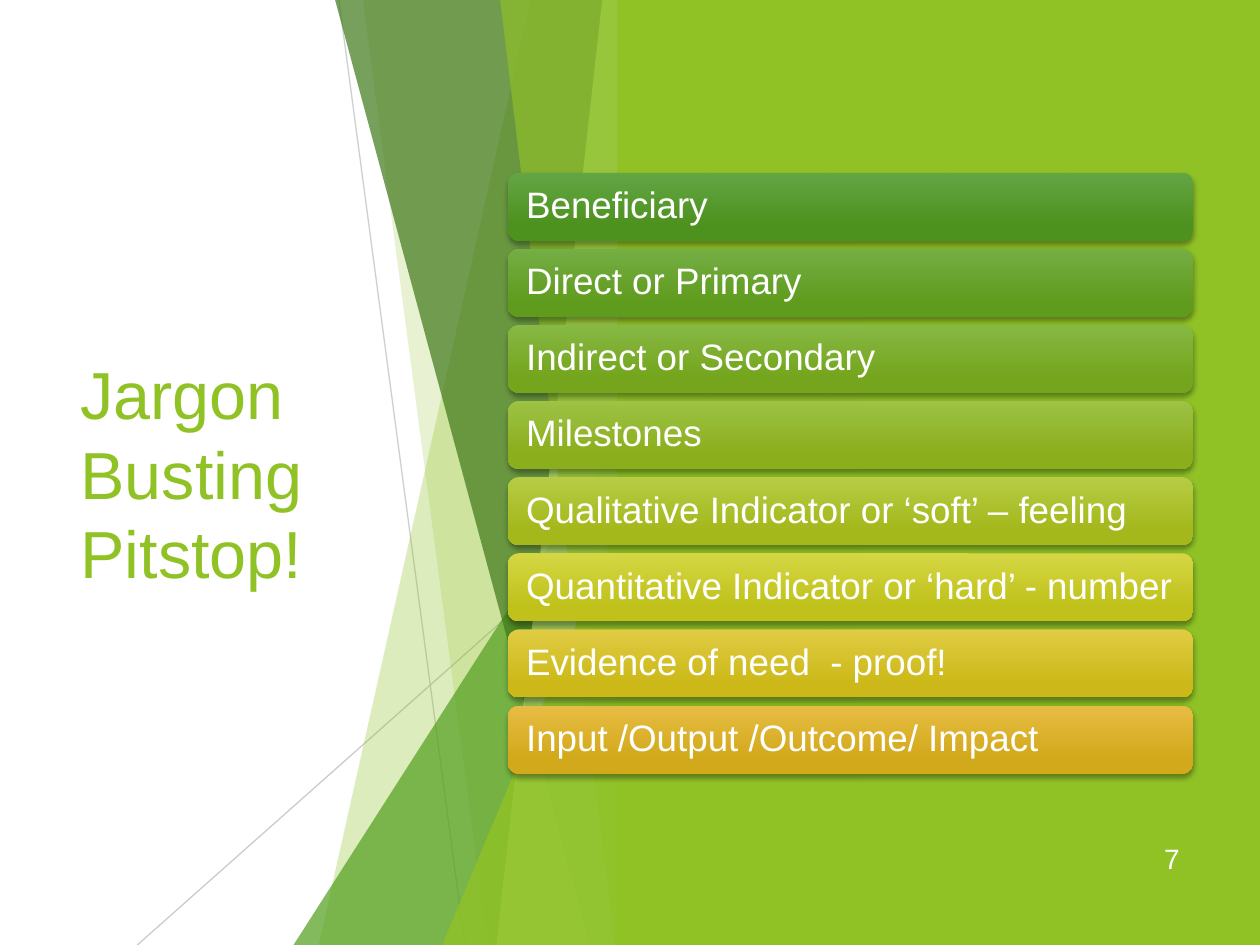
import pptx
import pptx.dml.color
import pptx.enum.shapes
import pptx.enum.text
import pptx.oxml
import pptx.oxml.ns
import pptx.util
from pptx.util import Inches

SHAPES = pptx.enum.shapes.MSO_SHAPE
MIDDLE = pptx.enum.text.MSO_ANCHOR.MIDDLE
COLORS = {"white": "FFFFFF", "lime": "90C226", "green": "54A021", "forest": "3F7819",
          "pale": "C0E474", "gray": "BFBFBF", "black": "000000"}
FACETS = [
    ("band", 3.21, 1.53, "lime", 30),
    ("band", 1.88, 2.87, "lime", 20),
    ("triangle", 1.33, 3.33, "green", 72),
    ("band", 1.66, 3.68, "forest", 70),
    ("band", 3.78, 2.94, "pale", 70),
    ("band", 2.97, 3.88, "lime", 65),
    ("triangle", 2.51, 3.93, "lime", 80),
]
RAYS = [((1.69, 0), (2.69, 7.5), 75), ((4, 4.03), (0.09, 7.5), 80)]
TERMS = [
    ("Beneficiary", "63A545", "4D921E"),
    ("Direct or Primary", "74AE44", "5F9C1E"),
    ("Indirect or Secondary", "87B844", "74A51D"),
    ("Milestones", "9DC244", "8BAE1D"),
    ("Qualitative Indicator or ‘soft’ – feeling", "B7CC44", "A4B81C"),
    ("Quantitative Indicator or ‘hard’ - number", "D4D643", "C0C21B"),
    ("Evidence of need  - proof!", "E0CC43", "CCB919"),
    ("Input /Output /Outcome/ Impact", "E7BC43", "D2A91B"),
]


def rgb(value):
    """Turn a hex string into a colour."""
    return pptx.dml.color.RGBColor.from_string(value)


def set_values(target, values):
    """Set attributes from a dict of format values."""
    for name, value in values.items():
        setattr(target, name, value)


def set_opacity(element, percent):
    """Give the first solid colour of an element an opacity."""
    color = next(element.iter(pptx.oxml.ns.qn("a:srgbClr")))
    alpha = color.makeelement(pptx.oxml.ns.qn("a:alpha"), {"val": str(percent * 1000)})
    color.append(alpha)


def paint(shape, color, opacity=100):
    """Fill a shape plainly, without line or shadow."""
    shape.shadow.inherit = False
    shape.fill.solid()
    shape.fill.fore_color.rgb = rgb(color)
    shape.line.fill.background()
    if opacity < 100:
        set_opacity(shape.fill._xPr, opacity)


def write(shape, text, size, color, left_inset=0.1, right_inset=0.1):
    """Write left-aligned, vertically centred text in a shape."""
    frame = shape.text_frame
    set_values(frame, {"word_wrap": True, "vertical_anchor": MIDDLE,
                       "margin_left": Inches(left_inset), "margin_right": Inches(right_inset)})
    paragraph = frame.paragraphs[0]
    paragraph.alignment = pptx.enum.text.PP_ALIGN.LEFT
    run = paragraph.add_run()
    run.text = text
    set_values(run.font, {"name": "Arial", "size": pptx.util.Pt(size)})
    run.font.color.rgb = rgb(color)
    return paragraph


def add_text(slide, left, top, width, height, text, size, color):
    """Add a text box."""
    box = slide.shapes.add_textbox(Inches(left), Inches(top), Inches(width), Inches(height))
    write(box, text, size, color)


def add_rays(slide, left, top):
    """Draw the thin crossing lines."""
    for (x1, y1), (x2, y2), opacity in RAYS:
        ray = slide.shapes.add_connector(
            pptx.enum.shapes.MSO_CONNECTOR.STRAIGHT,
            Inches(left + x1), Inches(top + y1), Inches(left + x2), Inches(top + y2))
        ray.line.width = pptx.util.Pt(0.75)
        ray.line.color.rgb = rgb(COLORS["gray"])
        properties = ray._element.spPr
        set_opacity(properties, opacity)
        properties.append(properties.makeelement(pptx.oxml.ns.qn("a:effectLst"), {}))


def add_facets(slide, left, top, width, height):
    """Layer translucent facets that share the right edge of the box."""
    for kind, first, second, color, opacity in FACETS:
        if kind == "triangle":
            shape = slide.shapes.add_shape(
                SHAPES.ISOSCELES_TRIANGLE, Inches(left + first), Inches(top + second),
                Inches(width - first), Inches(height - second))
            shape.adjustments[0] = 1
        else:
            corners = [(first, 0), (width, 0), (width, height), (second, height)]
            points = [(Inches(left + x), Inches(top + y)) for x, y in corners]
            builder = slide.shapes.build_freeform(*points[0])
            builder.add_line_segments(points[1:], close=True)
            shape = builder.convert_to_shape()
        paint(shape, COLORS[color], opacity)


def add_panel(slide, left, top, width, height):
    """Add the solid panel on the right."""
    panel = slide.shapes.add_shape(
        SHAPES.RECTANGLE, Inches(left), Inches(top), Inches(width), Inches(height))
    paint(panel, COLORS["lime"])


def add_shadow(shape):
    """Drop a soft shadow below a shape."""
    shape.shadow.inherit = False
    effects = shape._element.spPr.find(pptx.oxml.ns.qn("a:effectLst"))
    effects.append(pptx.oxml.parse_xml(
        f'<a:outerShdw {pptx.oxml.ns.nsdecls("a")} blurRad="{pptx.util.Pt(3)}" '
        f'dist="{pptx.util.Pt(2)}" dir="5400000" rotWithShape="0">'
        f'<a:srgbClr val="{COLORS["black"]}"><a:alpha val="35000"/></a:srgbClr></a:outerShdw>'))


def add_terms(slide, left, top, width, height):
    """Stack the term bars evenly in the box."""
    bar_height = 0.54
    pitch = (height - bar_height) / (len(TERMS) - 1)
    for index, (term, light, dark) in enumerate(TERMS):
        bar = slide.shapes.add_shape(
            SHAPES.ROUNDED_RECTANGLE, Inches(left), Inches(top + index * pitch),
            Inches(width), Inches(bar_height))
        bar.line.fill.background()
        bar.fill.gradient()
        bar.fill.gradient_angle = 270
        for stop, color, position in zip(bar.fill.gradient_stops, (light, dark), (0, 0.78)):
            stop.color.rgb = rgb(color)
            stop.position = position
        add_shadow(bar)
        paragraph = write(bar, term, 21, COLORS["white"], 0.12, 0.05)
        paragraph.line_spacing = 0.9


def build():
    """Build and save the slide."""
    presentation = pptx.Presentation()
    set_values(presentation, {"slide_width": Inches(10), "slide_height": Inches(7.5)})
    slide = presentation.slides.add_slide(presentation.slide_layouts[6])
    slide.background.fill.solid()
    slide.background.fill.fore_color.rgb = rgb(COLORS["white"])
    add_text(slide, 0.54, 1.51, 2.91, 4.48, "Jargon Busting Pitstop!", 38, COLORS["lime"])
    add_rays(slide, 1, 0)
    add_facets(slide, 1, 0, 4, 7.5)
    add_panel(slide, 4.9, 0, 5.1, 7.5)
    add_text(slide, 9.14, 6.61, 0.4, 0.4, "7", 16, COLORS["white"])
    add_terms(slide, 4.03, 1.37, 5.44, 4.77)
    presentation.save("out.pptx")


if __name__ == "__main__":
    build()
